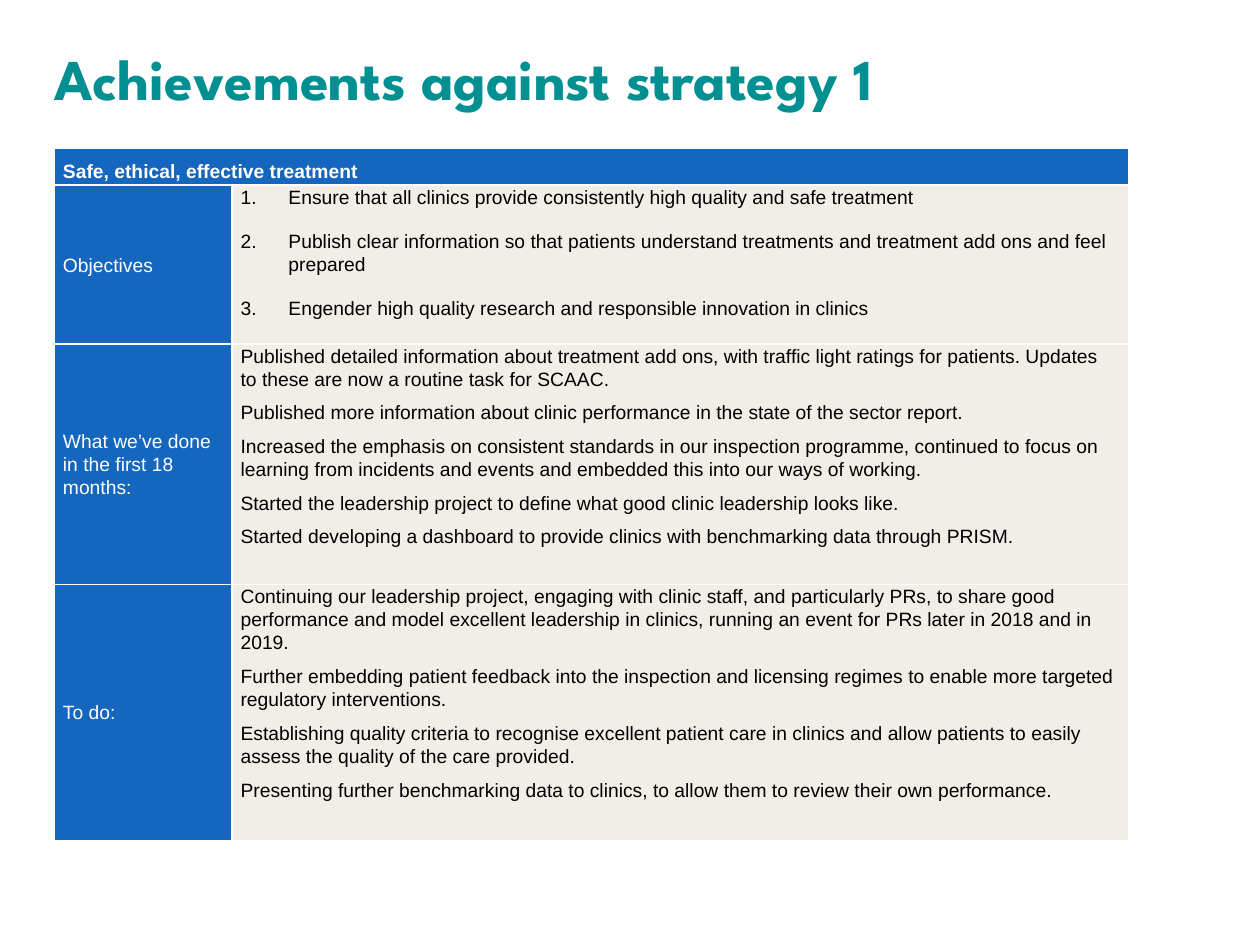
from lxml.etree import SubElement
from pptx import Presentation
from pptx.dml.color import RGBColor
from pptx.enum.text import MSO_ANCHOR
from pptx.oxml import parse_xml
from pptx.oxml.ns import nsdecls, qn
from pptx.util import Inches, Pt

COLORS = {"teal": "009091", "blue": "1466BF", "sand": "F1EDE7", "white": "FFFFFF", "black": "000000"}
GRID_COLUMNS, GRID_ROWS = 100, 75

HEADING = "Safe, ethical, effective treatment"
SECTIONS = [
    ("Objectives", [
        "Ensure that all clinics provide consistently high quality and safe treatment",
        "Publish clear information so that patients understand treatments and treatment add ons and feel prepared",
        "Engender high quality research and responsible innovation in clinics",
    ]),
    ("What we’ve done in the first 18 months:", [
        "Published detailed information about treatment add ons, with traffic light ratings for patients. "
        "Updates to these are now a routine task for SCAAC.",
        "Published more information about clinic performance in the state of the sector report.",
        "Increased the emphasis on consistent standards in our inspection programme, continued to focus on "
        "learning from incidents and events and embedded this into our ways of working.",
        "Started the leadership project to define what good clinic leadership looks like.",
        "Started developing a dashboard to provide clinics with benchmarking data through PRISM.",
    ]),
    ("To do:", [
        "Continuing our leadership project, engaging with clinic staff, and particularly PRs, to share good "
        "performance and model excellent leadership in clinics, running an event for PRs later in 2018 and in 2019.",
        "Further embedding patient feedback into the inspection and licensing regimes to enable more targeted "
        "regulatory interventions.",
        "Establishing quality criteria to recognise excellent patient care in clinics and allow patients to "
        "easily assess the quality of the care provided.",
        "Presenting further benchmarking data to clinics, to allow them to review their own performance.",
    ]),
]


class StrategySlide:
    """Holds the style and the slide, and places elements on a grid."""

    def __init__(self, presentation):
        self.slide = presentation.slides.add_slide(presentation.slide_layouts[6])
        self.column = presentation.slide_width / GRID_COLUMNS
        self.row = presentation.slide_height / GRID_ROWS

    def place(self, left, top, width, height):
        return (round(left * self.column), round(top * self.row),
                round(width * self.column), round(height * self.row))

    def style(self, paragraph, color, size=11, name="Arial", bold=False):
        font = paragraph.font
        font.size, font.name, font.bold = Pt(size), name, bold
        font.color.rgb = RGBColor.from_string(COLORS[color])

    def title(self, text, *area):
        frame = self.slide.shapes.add_textbox(*self.place(*area)).text_frame
        frame.margin_left = frame.margin_right = frame.margin_top = frame.margin_bottom = 0
        frame.word_wrap = True
        paragraph = frame.paragraphs[0]
        paragraph.text = text
        paragraph.line_spacing = Pt(33)
        self.style(paragraph, "teal", 33, "League Spartan", True)

    def table(self, left, top, columns, rows):
        area = self.place(left, top, sum(columns), sum(rows))
        table = self.slide.shapes.add_table(len(rows), len(columns), *area).table
        for column, width in zip(table.columns, columns):
            column.width = round(width * self.column)
        for row, height in zip(table.rows, rows):
            row.height = round(height * self.row)
        return table

    def cell(self, cell, texts, fill, color, anchor=MSO_ANCHOR.MIDDLE, bold=False,
             line_spacing=Pt(13.2), before=0, after=6, numbered=False):
        cell.margin_left = cell.margin_right = Inches(0.07)
        cell.margin_top = cell.margin_bottom = 0
        cell.vertical_anchor = anchor
        cell.fill.solid()
        cell.fill.fore_color.rgb = RGBColor.from_string(COLORS[fill])
        self.borders(cell)
        cell.text = "\n".join(texts)
        for index, paragraph in enumerate(cell.text_frame.paragraphs):
            if numbered:
                self.number(paragraph)
            paragraph.line_spacing = line_spacing
            paragraph.space_before = Pt(before if index else 0)
            paragraph.space_after = Pt(after)
            self.style(paragraph, color, bold=bold)

    def borders(self, cell):
        properties = cell._tc.get_or_add_tcPr()
        for index, side in enumerate(("lnL", "lnR", "lnT", "lnB")):
            properties.insert(index, parse_xml(
                f'<a:{side} {nsdecls("a")} w="{Pt(1)}"><a:solidFill>'
                f'<a:srgbClr val="{COLORS["white"]}"/></a:solidFill></a:{side}>'))

    def number(self, paragraph):
        properties = paragraph._p.get_or_add_pPr()
        indent = Inches(0.38)
        properties.set("marL", str(indent))
        properties.set("indent", str(-indent))
        SubElement(properties, qn("a:buFont"), typeface="+mj-lt")
        SubElement(properties, qn("a:buAutoNum"), type="arabicPeriod")


def main():
    presentation = Presentation()
    presentation.slide_width, presentation.slide_height = Inches(10), Inches(7.5)
    page = StrategySlide(presentation)
    page.title("Achievements against strategy 1", 4.3, 4.3, 91.3, 4.8)

    table = page.table(4.3, 11.8, columns=(14.1, 71.2), rows=(2.9, 12.6, 19.1, 20.3))
    table.cell(0, 0).merge(table.cell(0, 1))
    page.cell(table.cell(0, 0), [HEADING], "blue", "white", bold=True, line_spacing=1.5)
    for row, (label, points) in enumerate(SECTIONS, start=1):
        numbered = label == "Objectives"
        page.cell(table.cell(row, 0), [label], "blue", "white")
        page.cell(table.cell(row, 1), points, "sand", "black", MSO_ANCHOR.TOP, numbered=numbered,
                  before=12 if numbered else 0, after=0 if numbered else 6)

    presentation.save("out.pptx")


if __name__ == "__main__":
    main()
